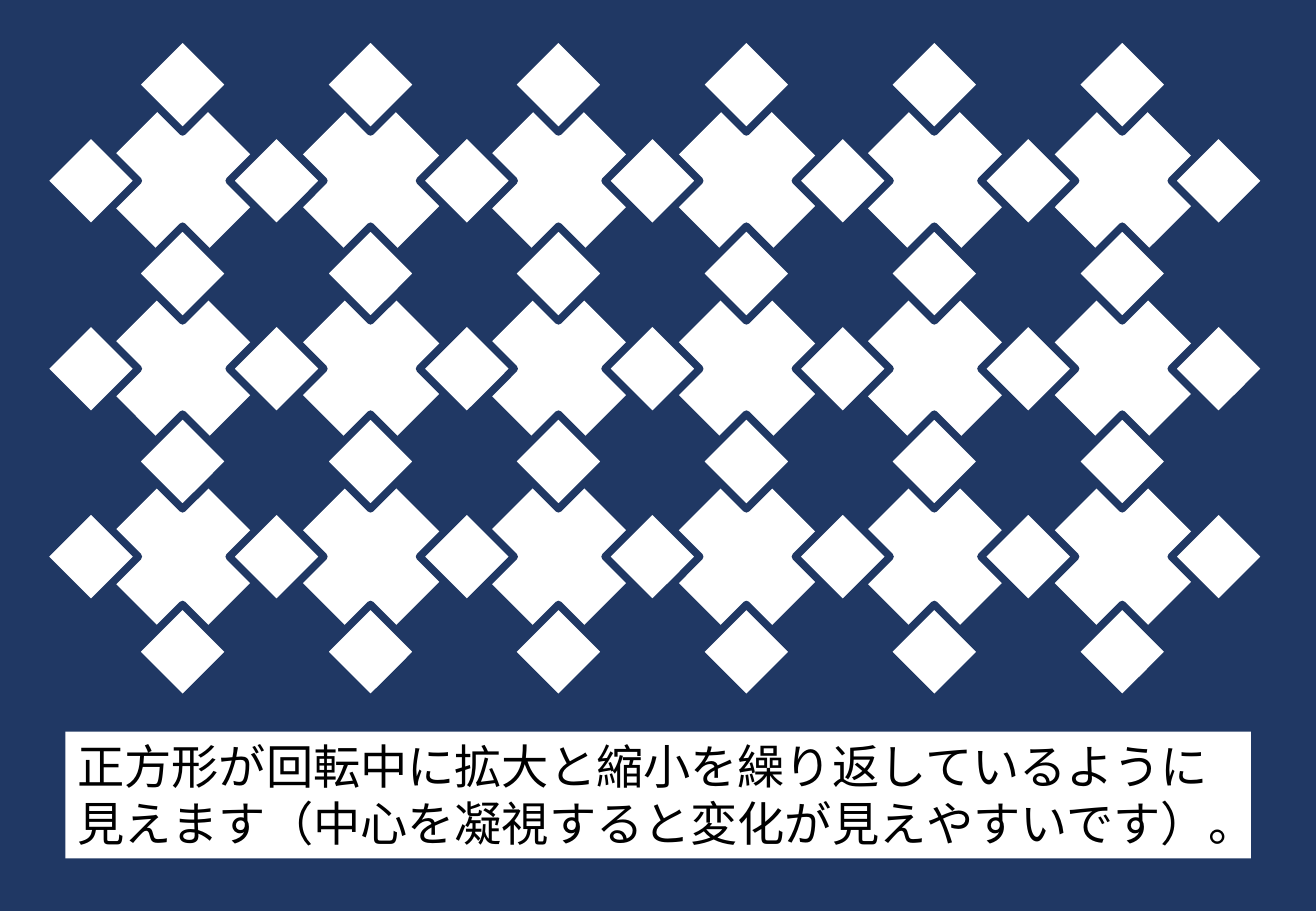
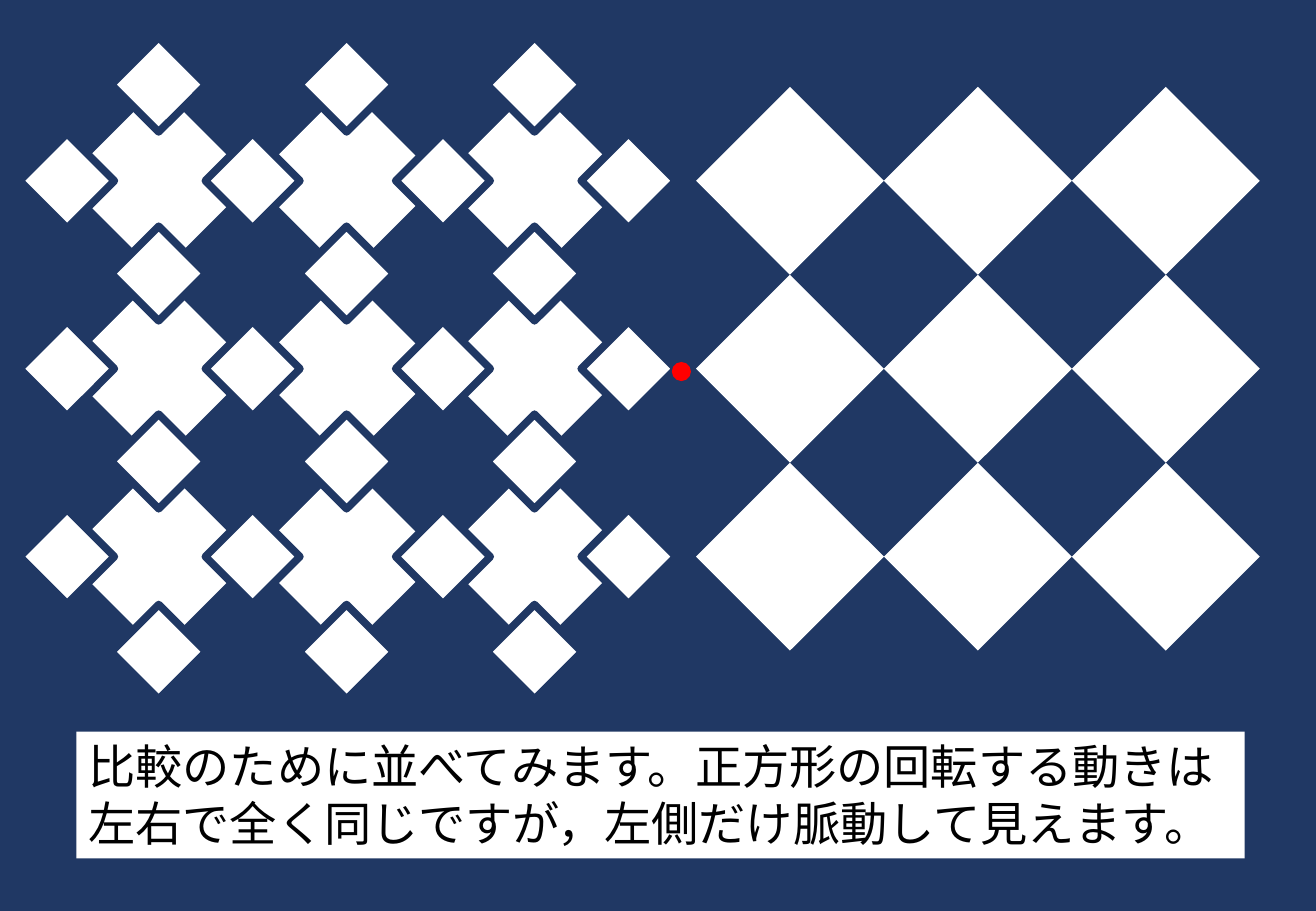
from math import sqrt

from pptx import Presentation
from pptx.dml.color import RGBColor
from pptx.enum.shapes import MSO_SHAPE as Kind
from pptx.enum.text import MSO_AUTO_SIZE as Fit
from pptx.util import Cm, Pt

NAVY = RGBColor(0x20, 0x38, 0x64)
WHITE = RGBColor(0xFF, 0xFF, 0xFF)
BLACK = RGBColor(0x00, 0x00, 0x00)
RED = RGBColor(0xFF, 0x00, 0x00)

# Lengths in cm
STEP = 3.93             # from one tile centre to the next
TOP = 3.78              # centre of the first row of tiles
ROWS = 3
TILE = STEP / sqrt(2)   # tiles touch at their corners
GEM = 1.4
GEM_YS = (1.77, 5.72, 9.65, 13.63)
NUDGE = 0.05            # every other side gem sits a little to the right


class Deck:
    """Holds the presentation, its style and the current slide."""

    def __init__(self):
        self.prs = Presentation()
        self.prs.slide_width = Cm(27.52)
        self.prs.slide_height = Cm(19.05)
        self.slide = None

    def add(self):
        self.slide = self.prs.slides.add_slide(self.prs.slide_layouts[6])
        fill = self.slide.background.fill
        fill.solid()
        fill.fore_color.rgb = NAVY

    def shape(self, kind, x, y, size, color):
        """Draw a preset shape centred on x, y."""
        item = self.slide.shapes.add_shape(
            kind, Cm(x - size / 2), Cm(y - size / 2), Cm(size), Cm(size))
        item.shadow.inherit = False
        item.fill.solid()
        item.fill.fore_color.rgb = color
        item.line.fill.background()
        return item

    def square(self, x, y, size):
        item = self.shape(Kind.RECTANGLE, x, y, size, WHITE)
        item.rotation = 315
        return item

    def gem(self, x, y):
        """Draw a small square with a navy rim."""
        line = self.square(x, y, GEM).line
        line.color.rgb = NAVY
        line.width = Pt(4.5)

    def dot(self, x, y, size):
        self.shape(Kind.OVAL, x, y, size, RED)

    def tiles(self, left, cols):
        for row in range(ROWS):
            for col in range(cols):
                self.square(left + col * STEP, TOP + row * STEP, TILE)

    def gems(self, left, cols):
        """Cover the corners of a grid of tiles with gems."""
        for y in GEM_YS:
            for col in range(cols):
                self.gem(left + col * STEP, y)
        for row in range(ROWS):
            for col in range(cols + 1):
                x = left + (col - 0.5) * STEP
                self.gem(x + NUDGE * (col % 2 == 0), TOP + row * STEP)

    def note(self, left, width, *lines):
        box = self.slide.shapes.add_textbox(
            Cm(left), Cm(15.3), Cm(width), Cm(2.65))
        box.fill.solid()
        box.fill.fore_color.rgb = WHITE
        frame = box.text_frame
        frame.word_wrap = True
        frame.auto_size = Fit.SHAPE_TO_FIT_TEXT
        frame.text = "\n".join(lines)
        for para in frame.paragraphs:
            para.font.name = "Calibri"
            para.font.size = Pt(28)
            para.font.color.rgb = BLACK


def main():
    deck = Deck()

    deck.add()
    deck.tiles(3.82, 6)
    deck.gems(3.82, 6)
    deck.note(1.37, 24.79,
              "正方形が回転中に拡大と縮小を繰り返しているように",
              "見えます（中心を凝視すると変化が見えやすいです）。")

    deck.add()
    deck.tiles(3.32, 3)
    deck.tiles(16.52, 3)
    deck.note(1.6, 24.43,
              "比較のために並べてみます。正方形の回転する動きは"
              "左右で全く同じですが，左側だけ脈動して見えます。")
    deck.gems(3.32, 3)
    deck.dot(14.25, 7.77, 0.4)

    deck.prs.save("out.pptx")


if __name__ == "__main__":
    main()
